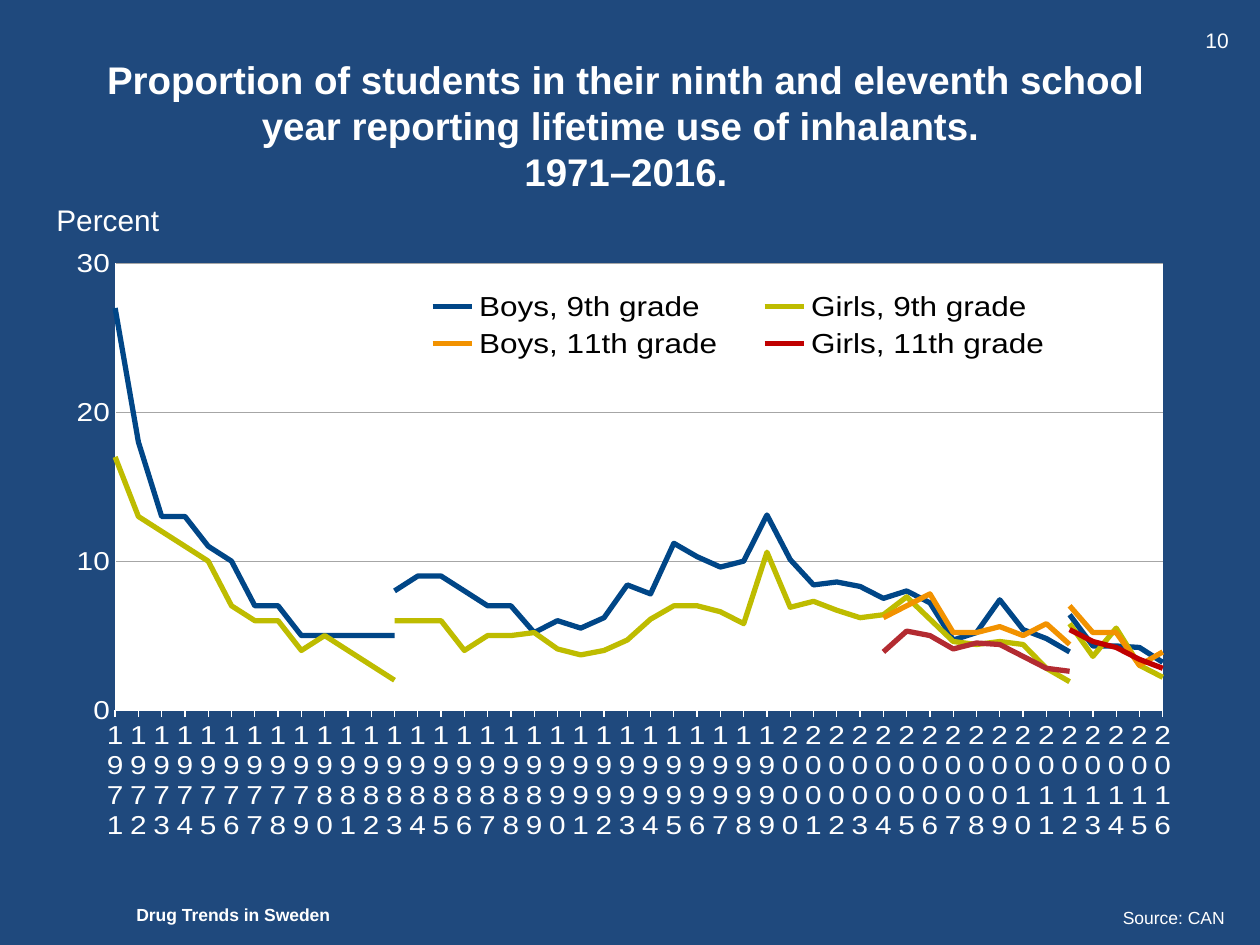
from pptx import Presentation, oxml, util as u
from pptx.chart.data import CategoryChartData
from pptx.dml.color import RGBColor
from pptx.enum import chart as ch, text
from pptx.oxml.ns import nsdecls

PX = 914400 / 126
YEARS = range(1971, 2017)
BACKGROUND, WHITE, BLACK, GRID = "1F497D", "FFFFFF", "000000", "A6A6A6"
BLUE, OLIVE, ORANGE, RED, DARK_RED = "004687", "BEBC00", "F29200", "C00000", "B32B31"

# Each group has two survey runs: (name, ((colour, first year, values), ...))
GROUPS = [
    ("Boys, 9th grade", (
        (BLUE, 1971, [27, 18, 13, 13, 11, 10, 7, 7, 5, 5, 5, 5, 5]),
        (BLUE, 1983, [8, 9, 9, 8, 7, 7, 5.2, 6, 5.5, 6.2, 8.4, 7.8, 11.2, 10.3, 9.6,
                      10, 13.1, 10.1, 8.4, 8.6, 8.3, 7.5, 8, 7.2, 4.7, 5.2, 7.4, 5.4,
                      4.8, 3.9]))),
    ("Girls, 9th grade", (
        (OLIVE, 1971, [17, 13, 12, 11, 10, 7, 6, 6, 4, 5, 4, 3, 2]),
        (OLIVE, 1983, [6, 6, 6, 4, 5, 5, 5.2, 4.1, 3.7, 4, 4.7, 6.1, 7, 7, 6.6,
                       5.8, 10.6, 6.9, 7.3, 6.7, 6.2, 6.4, 7.6, 6.1, 4.6, 4.4, 4.6, 4.4,
                       2.8, 1.9]))),
    ("Boys, 11th grade", (
        (ORANGE, 2012, [7, 5.2, 5.2, 3, 3.9]),
        (ORANGE, 2004, [6.2, 7, 7.8, 5.2, 5.2, 5.6, 5, 5.8, 4.4]))),
    ("Girls, 11th grade", (
        (RED, 2012, [5.4, 4.6, 4.2, 3.4, 2.8]),
        (DARK_RED, 2004, [3.9, 5.3, 5, 4.1, 4.5, 4.4, 3.6, 2.8, 2.6]))),
]
# The ninth-grade series also resume in 2012
RESUMED = {"Boys, 9th grade": [6.4, 4.3, 4.3, 4.2, 3.2],
           "Girls, 9th grade": [5.8, 3.6, 5.5, 3, 2.2]}


def rgb(value):
    return RGBColor.from_string(value)


def xml(markup):
    return oxml.parse_xml(markup.replace(">", f" {nsdecls('c', 'a')}>", 1))


def layout_xml(x, y, w, h, inner=False):
    target = '<c:layoutTarget val="inner"/>' if inner else ""
    return xml(f'<c:layout><c:manualLayout>{target}'
               f'<c:xMode val="edge"/><c:yMode val="edge"/><c:x val="{x}"/><c:y val="{y}"/>'
               f'<c:w val="{w}"/><c:h val="{h}"/></c:manualLayout></c:layout>')


class Slide:
    font_name = "Arial"

    def __init__(self, deck):
        self.page = deck.slides.add_slide(deck.slide_layouts[5])
        self.page.background.fill.solid()
        self.page.background.fill.fore_color.rgb = rgb(BACKGROUND)

    def emu(self, *lengths):
        return [u.Emu(round(length * PX)) for length in lengths]

    def style(self, font, size, colour=WHITE, bold=False):
        font.name, font.size, font.bold = self.font_name, u.Pt(size), bold
        font.color.rgb = rgb(colour)

    def set_words(self, box, words, size, bold, align, anchor):
        frame = box.text_frame
        frame.text = words
        frame.word_wrap = True
        frame.auto_size = text.MSO_AUTO_SIZE.NONE
        frame.vertical_anchor = anchor
        para = frame.paragraphs[0]
        para.alignment = align
        for span in para.runs:
            self.style(span.font, size, bold=bold)

    def title(self, place, words, size):
        box = self.page.shapes.title
        box.left, box.top, box.width, box.height = self.emu(*place)
        self.set_words(box, words, size, True, text.PP_ALIGN.CENTER, text.MSO_ANCHOR.MIDDLE)

    def label(self, place, words, size, bold=False, align=text.PP_ALIGN.LEFT,
              anchor=text.MSO_ANCHOR.TOP):
        box = self.page.shapes.add_textbox(*self.emu(*place))
        self.set_words(box, words, size, bold, align, anchor)

    def line_chart(self, place, groups):
        data = CategoryChartData(number_format="0")
        data.categories = [str(year) for year in YEARS]
        colours = []
        for name, runs in groups:
            for number, (colour, start, values) in enumerate(runs):
                points = dict(zip(range(start, 2017), values))
                if number == 0:
                    points.update(zip(range(2012, 2017), RESUMED.get(name, [])))
                data.add_series(name, [points.get(year) for year in YEARS])
                colours.append(colour)
        chart = self.page.shapes.add_chart(
            ch.XL_CHART_TYPE.LINE, *self.emu(*place), data).chart
        chart.has_title = False
        self.style(chart.font, 18)
        chart.plots[0].vary_by_categories = False
        for series, colour in zip(chart.plots[0].series, colours):
            series.smooth = False
            series.marker.style = ch.XL_MARKER_STYLE.NONE
            series.format.line.width = u.Pt(3)
            series.format.line.color.rgb = rgb(colour)
        self.axes(chart)
        self.legend(chart)
        # White plot area with a fixed place
        area = chart.element.find(".//{*}plotArea")
        for old in area.findall("{*}layout"):
            area.remove(old)
        area.insert(0, layout_xml(0.05, 0.07, 0.933, 0.834, inner=True))
        area.append(xml(f'<c:spPr><a:solidFill><a:srgbClr val="{WHITE}"/>'
                        '</a:solidFill></c:spPr>'))

    def axes(self, chart):
        years, percent = chart.category_axis, chart.value_axis
        for axis, width in ((years, 0.75), (percent, 0.25)):
            self.style(axis.tick_labels.font, 17)
            axis.format.line.color.rgb = rgb(WHITE)
            axis.format.line.width = u.Pt(width)
            axis.minor_tick_mark = ch.XL_TICK_MARK.NONE
        years.major_tick_mark = ch.XL_TICK_MARK.OUTSIDE
        percent.major_tick_mark = ch.XL_TICK_MARK.NONE
        percent.minimum_scale, percent.maximum_scale, percent.major_unit = 0, 30, 10
        percent.tick_labels.number_format = "0"
        percent.tick_labels.number_format_is_linked = False
        grid = percent.major_gridlines.format.line
        grid.color.rgb, grid.width = rgb(GRID), u.Pt(0.25)
        # Every year upright, and lines that start on the value axis
        tree = chart.element
        labels = tree.find(".//{*}catAx/{*}txPr/{*}bodyPr")
        labels.set("rot", "0")
        labels.set("vert", "horz")
        tree.find(".//{*}catAx/{*}lblOffset").addnext(
            xml('<c:tickLblSkip val="1"></c:tickLblSkip>'))
        crossing = tree.find(".//{*}valAx/{*}crossBetween")
        if crossing is None:
            crossing = xml('<c:crossBetween></c:crossBetween>')
            tree.find(".//{*}valAx/{*}majorUnit").addprevious(crossing)
        crossing.set("val", "midCat")

    def legend(self, chart):
        chart.has_legend = True
        legend = chart.legend
        legend.position = ch.XL_LEGEND_POSITION.TOP
        legend.include_in_layout = False
        self.style(legend.font, 18, BLACK)
        # One entry for each group
        tree = chart.element.find(".//{*}legend")
        for old in tree.findall("{*}layout"):
            tree.remove(old)
        parts = [xml(f'<c:legendEntry><c:idx val="{index}"/><c:delete val="1"/></c:legendEntry>')
                 for index in range(1, 8, 2)]
        parts.append(layout_xml(0.3, 0.11, 0.61, 0.15))
        for offset, part in enumerate(parts, 1):
            tree.insert(offset, part)


def main():
    deck = Presentation()
    deck.slide_width, deck.slide_height = u.Inches(10), u.Inches(7.5)
    slide = Slide(deck)

    # Heading
    slide.title((59, 45, 1134, 160),
                "Proportion of students in their ninth and eleventh school year "
                "reporting lifetime use of inhalants. \v1971–2016.", 22)

    # Chart and its unit
    slide.line_chart((59, 226, 1123, 614), GROUPS)
    slide.label((44, 195, 158, 49), "Percent", 17, anchor=text.MSO_ANCHOR.MIDDLE)

    # Page number and footer
    slide.label((1193, 21, 59, 38), "10", 12)
    slide.label((124, 898, 252, 34), "Drug Trends in Sweden", 10, bold=True)
    slide.label((1087, 901, 150, 34), "Source: CAN", 10, align=text.PP_ALIGN.RIGHT)

    deck.save("out.pptx")


if __name__ == "__main__":
    main()
